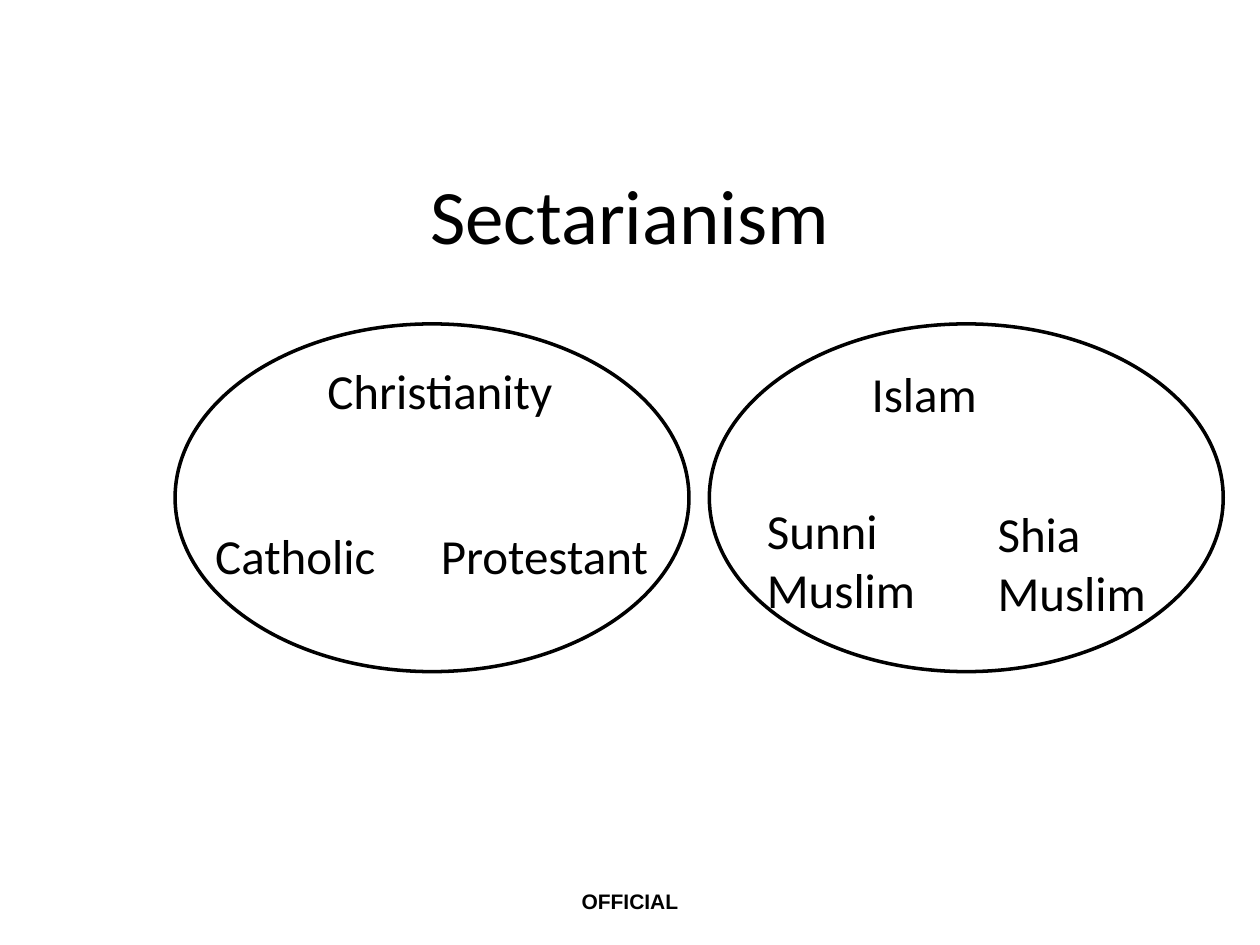
"""Build a slide showing sectarian divisions within Christianity and Islam."""
from typing import NamedTuple

from pptx import Presentation
from pptx.dml.color import RGBColor
from pptx.enum.shapes import MSO_SHAPE
from pptx.enum.text import MSO_ANCHOR, PP_ALIGN
from pptx.slide import Slide
from pptx.util import Cm, Pt

BLACK = RGBColor(0x00, 0x00, 0x00)
WHITE = RGBColor(0xFF, 0xFF, 0xFF)


class Label(NamedTuple):
    text: str
    left: float
    top: float
    width: float
    height: float = 1.45
    size: int = 28
    font: str = "Calibri"
    bold: bool = False
    align: PP_ALIGN = PP_ALIGN.LEFT
    anchor: MSO_ANCHOR = MSO_ANCHOR.TOP


RELIGION_LEFTS = (14.3, 3.53)

LABELS = (
    Label("Sectarianism", 1.27, 2.72, 22.86, 3.18, size=44,
          align=PP_ALIGN.CENTER, anchor=MSO_ANCHOR.MIDDLE),
    Label("Catholic", 4.09, 10.46, 8),
    Label("Protestant", 8.64, 10.46, 7.39),
    Label("Christianity", 6.35, 7.14, 8.61),
    Label("Islam", 17.32, 7.21, 6.81),
    Label("Sunni\nMuslim", 15.21, 9.96, 5.28, 2.64),
    Label("Shia\nMuslim", 19.86, 10.03, 5.28, 2.64),
    Label("OFFICIAL", 0, 17.65, 25.4, 1.02, size=12, font="Arial", bold=True,
          align=PP_ALIGN.CENTER, anchor=MSO_ANCHOR.MIDDLE),
)


def draw_religion(slide: Slide, left: float) -> None:
    shape = slide.shapes.add_shape(
        MSO_SHAPE.OVAL, Cm(left), Cm(6.53), Cm(10.36), Cm(7.01))
    shape.shadow.inherit = False
    shape.fill.solid()
    shape.fill.fore_color.rgb = WHITE
    shape.line.color.rgb = BLACK
    shape.line.width = Pt(2)


def draw_label(slide: Slide, label: Label) -> None:
    shape = slide.shapes.add_textbox(
        Cm(label.left), Cm(label.top), Cm(label.width), Cm(label.height))
    frame = shape.text_frame
    frame.word_wrap = True
    frame.vertical_anchor = label.anchor
    frame.text = label.text
    for paragraph in frame.paragraphs:
        paragraph.alignment = label.align
        paragraph.font.name = label.font
        paragraph.font.size = Pt(label.size)
        paragraph.font.bold = label.bold
        paragraph.font.color.rgb = BLACK


def main() -> None:
    presentation = Presentation()
    presentation.slide_width = Cm(25.4)
    presentation.slide_height = Cm(19.05)
    slide = presentation.slides.add_slide(presentation.slide_layouts[6])
    for left in RELIGION_LEFTS:
        draw_religion(slide, left)
    for label in LABELS:
        draw_label(slide, label)
    presentation.save("out.pptx")


if __name__ == "__main__":
    main()
